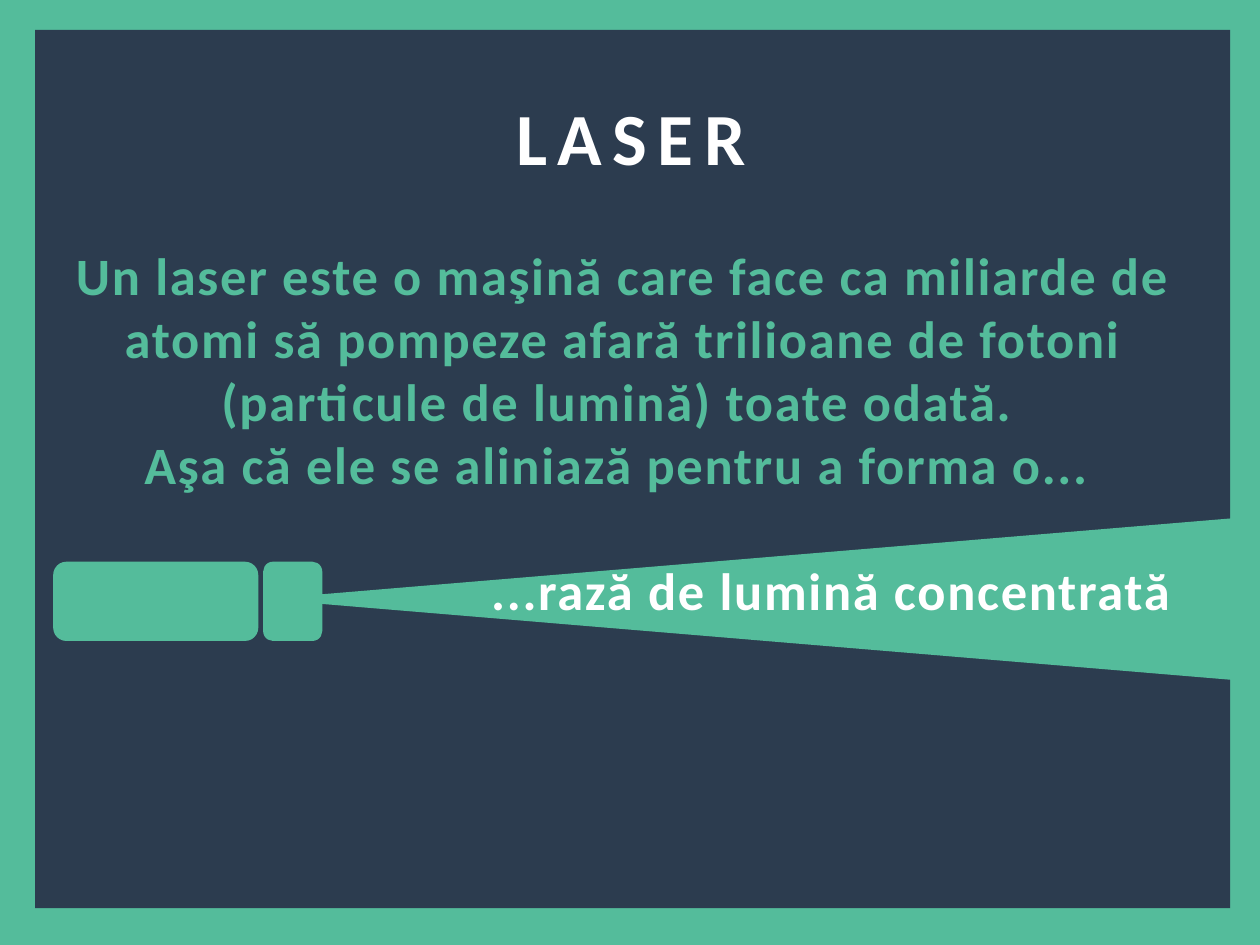
from pptx import Presentation
from pptx.dml.color import RGBColor
from pptx.enum.shapes import MSO_SHAPE
from pptx.enum.text import MSO_ANCHOR, PP_ALIGN
from pptx.util import Pt

GREEN = RGBColor(0x54, 0xBC, 0x9B)
NAVY = RGBColor(0x2C, 0x3C, 0x4F)
WHITE = RGBColor(0xFF, 0xFF, 0xFF)


def add_block(kind, left, top, width, height, color):
    block = slide.shapes.add_shape(kind, Pt(left), Pt(top), Pt(width), Pt(height))
    block.shadow.inherit = False
    block.fill.solid()
    block.fill.fore_color.rgb = color
    block.line.fill.background()
    return block


def write_lines(holder, lines, size, color, spacing):
    frame = holder.text_frame
    frame.word_wrap = True
    frame.vertical_anchor = MSO_ANCHOR.TOP
    frame.text = "\n".join(lines)
    for paragraph in frame.paragraphs:
        paragraph.alignment = PP_ALIGN.CENTER
        paragraph.font.name = "Calibri"
        paragraph.font.size = Pt(size)
        paragraph.font.bold = True
        paragraph.font.color.rgb = color
        # Letter spacing, in hundredths of a point
        for run in paragraph.runs:
            run.font._element.set("spc", str(spacing * 100))


presentation = Presentation()
presentation.slide_width = Pt(720)
presentation.slide_height = Pt(540)
slide = presentation.slides.add_slide(presentation.slide_layouts[5])

# Green border around a dark panel, which goes behind the title
slide.background.fill.solid()
slide.background.fill.fore_color.rgb = GREEN
panel = add_block(MSO_SHAPE.RECTANGLE, 20, 17, 683, 502, NAVY)
slide.shapes._spTree.insert(2, panel._element)

# Title
title = slide.shapes.title
title.left, title.top, title.width, title.height = Pt(19), Pt(49), Pt(683), Pt(58)
write_lines(title, ["LASER"], 42, WHITE, 6)

# Laser pointer: body and head
for left, width in ((30.4, 117.2), (150.4, 33.8)):
    add_block(MSO_SHAPE.ROUNDED_RECTANGLE, left, 321, width, 45.3, GREEN)

# Beam, opening to the right from the pointer
beam = add_block(MSO_SHAPE.ISOSCELES_TRIANGLE, 384.5, 61.9, 93.6, 560.9, GREEN)
beam.rotation = 270

# Explanation above the beam
explanation = slide.shapes.add_textbox(Pt(18.7), Pt(135.4), Pt(675.4), Pt(152))
write_lines(explanation, [
    "Un laser este o maşină care face ca miliarde de atomi să pompeze afară "
    "trilioane de fotoni (particule de lumină) toate odată. ",
    "Aşa că ele se aliniază pentru a forma o... ",
], 30, GREEN, 1)

# Words on the beam
beam_caption = slide.shapes.add_textbox(Pt(259), Pt(315.4), Pt(432), Pt(44))
write_lines(beam_caption, ["...rază de lumină concentrată"], 30, WHITE, 1)

presentation.save("out.pptx")
